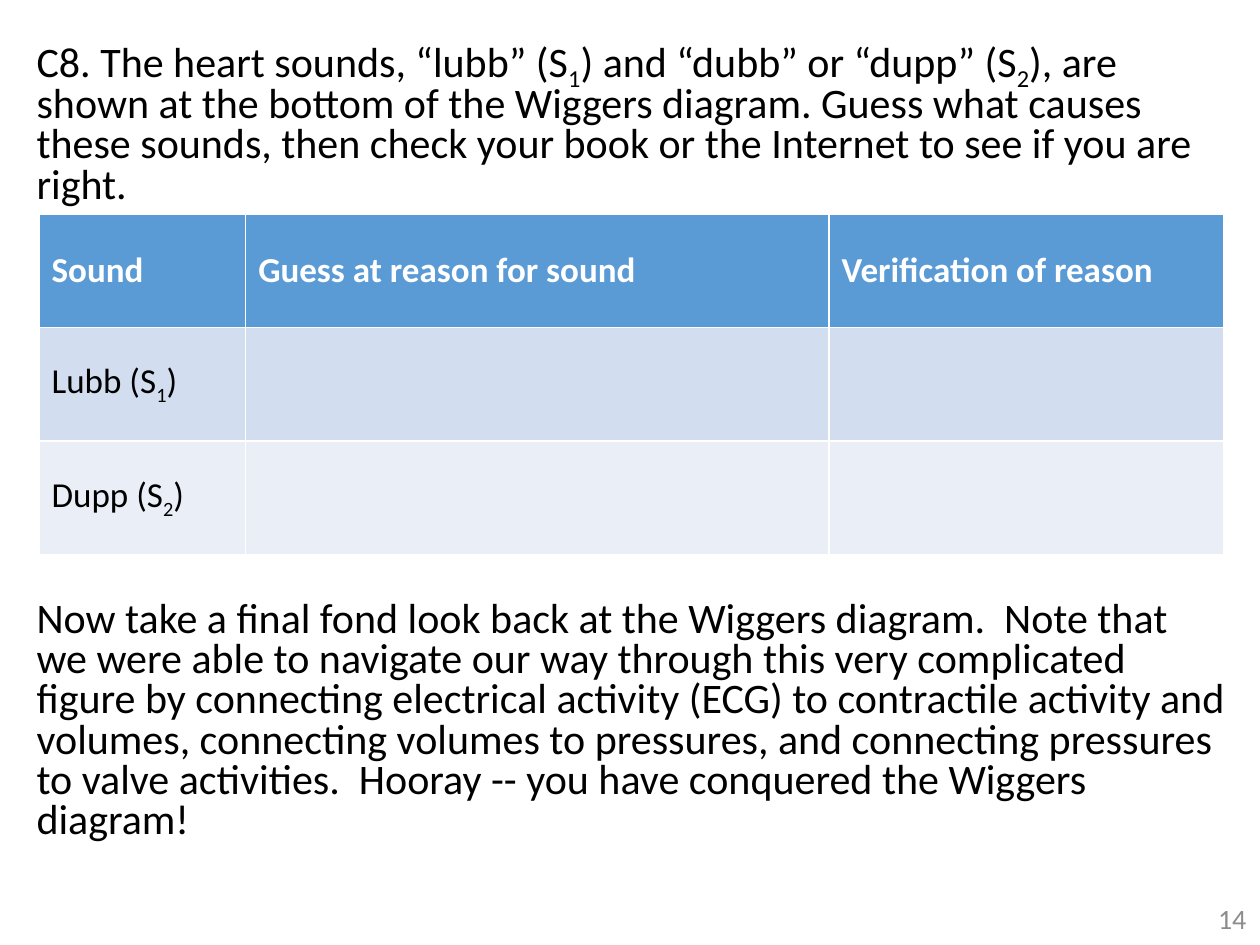
from pptx import Presentation
from pptx.dml.color import RGBColor
from pptx.enum.text import MSO_ANCHOR, MSO_AUTO_SIZE, PP_ALIGN
from pptx.oxml.xmlchemy import OxmlElement
from pptx.util import Inches, Pt

COLORS = {
    "text": "000000",
    "number": "8C8C8C",
    "header_text": "FFFFFF",
    "header": "5B9BD5",
    "band_dark": "D2DEEF",
    "band_light": "EAEFF7",
}
FONT = "Calibri"
QUESTION = [
    "C8. The heart sounds, “lubb” (S", "1", ") and “dubb” or “dupp” (S", "2",
    "), are shown at the bottom of the Wiggers diagram. Guess what causes "
    "these sounds, then check your book or the Internet to see if you are right.",
]
CLOSING = [
    "Now take a final fond look back at the Wiggers diagram.  Note that we were "
    "able to navigate our way through this very complicated figure by connecting "
    "electrical activity (ECG) to contractile activity and volumes, connecting "
    "volumes to pressures, and connecting pressures to valve activities.  "
    "Hooray -- you have conquered the Wiggers diagram!",
]
BODY = [(QUESTION, 10), (CLOSING, 225)]
SOUND_ROWS = [
    [["Sound"], ["Guess at reason for sound"], ["Verification of reason"]],
    [["Lubb (S", "1", ")"], [], []],
    [["Dupp (S", "2", ")"], [], []],
]
ROW_FILLS = ["header", "band_dark", "band_light"]
COLUMN_WIDTHS = [1.64, 4.63, 3.13]
ROW_HEIGHT = 0.9
PAGE_NUMBER = "14"


def add_runs(paragraph, pieces, size, color, bold=False):
    """Write the pieces as runs, with every second one as a subscript."""
    for index, piece in enumerate(pieces):
        run = paragraph.add_run()
        run.text = piece
        run.font.name = FONT
        run.font.size = Pt(size)
        run.font.bold = bold
        run.font.color.rgb = RGBColor.from_string(COLORS[color])
        if index % 2:
            run.font._element.set("baseline", "-25000")


def add_body(slide):
    """Fill the body placeholder with the question and the closing words."""
    body = slide.placeholders[1]
    body.left, body.top = Inches(0.19), Inches(0.27)
    body.width, body.height = Inches(9.65), Inches(6.82)
    frame = body.text_frame
    frame.auto_size = MSO_AUTO_SIZE.NONE
    for index, (pieces, gap) in enumerate(BODY):
        paragraph = frame.add_paragraph() if index else frame.paragraphs[0]
        paragraph.line_spacing = 0.8
        paragraph.space_before = Pt(gap)
        properties = paragraph._p.get_or_add_pPr()
        properties.set("marL", "0")
        properties.set("indent", "0")
        properties.append(OxmlElement("a:buNone"))
        add_runs(paragraph, pieces, 24, "text")


def add_sound_table(slide):
    """Add the table of heart sounds."""
    table = slide.shapes.add_table(
        len(SOUND_ROWS), len(COLUMN_WIDTHS), Inches(0.31), Inches(1.7),
        Inches(sum(COLUMN_WIDTHS)), Inches(ROW_HEIGHT * len(SOUND_ROWS)),
    ).table
    for column, width in zip(table.columns, COLUMN_WIDTHS):
        column.width = Inches(width)
    for row, cells, fill in zip(table.rows, SOUND_ROWS, ROW_FILLS):
        row.height = Inches(ROW_HEIGHT)
        is_header = fill == "header"
        for cell, pieces in zip(row.cells, cells):
            cell.fill.solid()
            cell.fill.fore_color.rgb = RGBColor.from_string(COLORS[fill])
            cell.vertical_anchor = MSO_ANCHOR.MIDDLE
            add_runs(cell.text_frame.paragraphs[0], pieces, 20,
                     "header_text" if is_header else "text", is_header)


def add_page_number(slide):
    """Add the page number at the lower right."""
    number = slide.shapes.add_textbox(
        Inches(7.74), Inches(7.09), Inches(2.25), Inches(0.4)).text_frame
    number.word_wrap = True
    number.vertical_anchor = MSO_ANCHOR.MIDDLE
    number.paragraphs[0].alignment = PP_ALIGN.RIGHT
    add_runs(number.paragraphs[0], [PAGE_NUMBER], 16, "number")


def main():
    """Build the heart sounds slide."""
    deck = Presentation()
    deck.slide_width, deck.slide_height = Inches(10), Inches(7.5)
    slide = deck.slides.add_slide(deck.slide_layouts[1])
    empty_title = slide.shapes.title._element
    empty_title.getparent().remove(empty_title)
    add_body(slide)
    add_page_number(slide)
    add_sound_table(slide)
    deck.save("out.pptx")


if __name__ == "__main__":
    main()
